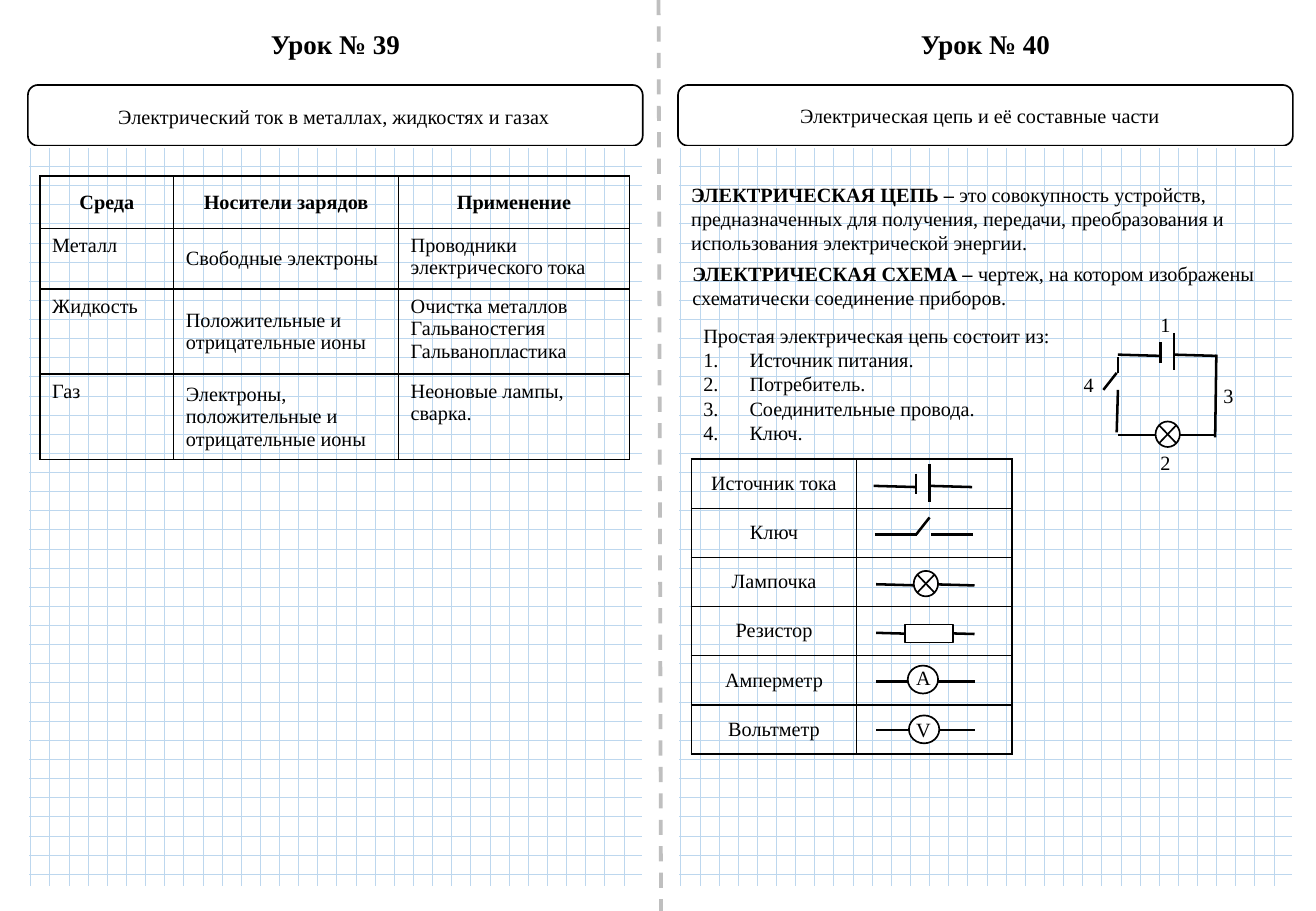
from pptx import Presentation
from pptx import util as u
from pptx.dml.color import RGBColor
from pptx.enum import dml, shapes, text
from pptx.oxml import parse_xml
from pptx.oxml.ns import nsdecls, qn

# Content
FONT, INK, PAPER, GRID, CUT = "Times New Roman", "000000", "FFFFFF", "BDD7EE", "BFBFBF"
PAGES = [(0.23, "Урок № 39"), (5.58, "Урок № 40")]
TOPICS = [
    ((0.33, 0.81, 4.84, 0.3), "Электрический ток в металлах, жидкостях и газах"),
    ((5.5, 0.8, 5.13, 0.3), "Электрическая цепь и её составные части"),
]
MEDIA = [
    ["Среда", "Носители зарядов", "Применение"],
    ["Металл", "Свободные электроны", "Проводники электрического тока"],
    ["Жидкость", "Положительные и отрицательные ионы",
     "Очистка металлов\nГальваностегия\nГальванопластика"],
    ["Газ", "Электроны, положительные и отрицательные ионы", "Неоновые лампы, сварка."],
]
TERMS = [
    ((5.59, 1.45, 5.25, 0.71), "ЭЛЕКТРИЧЕСКАЯ ЦЕПЬ – ",
     "это совокупность устройств, предназначенных для получения, передачи, "
     "преобразования и использования электрической энергии."),
    ((5.6, 2.1, 5.25, 0.5), "ЭЛЕКТРИЧЕСКАЯ СХЕМА – ",
     "чертеж, на котором изображены схематически соединение приборов."),
]
INTRO = "Простая электрическая цепь состоит из:"
PARTS = ["Источник питания.", "Потребитель.", "Соединительные провода.", "Ключ."]
SIGNS = ["Источник тока", "Ключ", "Лампочка", "Резистор", "Амперметр", "Вольтметр"]

# Each pair of wire stubs: left end, height, drop along the stub
STUBS = [(7.19, 4, 0.01), (7.2, 4.4, 0), (7.21, 4.81, 0.01), (7.21, 5.21, 0.01),
         (7.21, 5.61, 0), (7.21, 6.01, 0), (9.2, 2.92, 0.01), (9.2, 3.58, 0)]
CELLS = [(7.19, 4), (9.2, 2.92)]
LAMPS = [(7.21, 4.81), (9.2, 3.58)]
KEYS = [(7.54, 4.4, 7.65, 4.26), (9.08, 3.21, 9.19, 3.07)]
SIDES = [(9.19, 3.56, 9.2, 3.21), (10, 3.6, 10.01, 2.92), (9.2, 3.07, 9.2, 2.94)]
METERS = [(7.47, 5.48), (7.48, 5.89)]
MARKS = [("А", 7.44, 5.43), ("V", 7.44, 5.86), ("1", 9.45, 2.52),
         ("2", 9.45, 3.66), ("3", 9.97, 3.11), ("4", 8.82, 3.02)]

deck = Presentation()
deck.slide_width, deck.slide_height = u.Inches(10.83), u.Inches(7.5)
slide = deck.slides.add_slide(deck.slide_layouts[6])
art = slide.shapes
SHAPE = shapes.MSO_SHAPE
MID = text.PP_ALIGN.CENTER


def paint(color, code):
    color.rgb = RGBColor.from_string(code)


def inches(*nums):
    return [u.Inches(n) for n in nums]


def write(para, words, size=12, bold=False, align=None):
    run = para.add_run()
    run.text = words
    run.font.name, run.font.size, run.font.bold = FONT, u.Pt(size), bold
    paint(run.font.color, INK)
    if align is not None:
        para.alignment = align


def box(at):
    frame = art.add_textbox(*inches(*at)).text_frame
    frame.word_wrap = True
    frame.auto_size = text.MSO_AUTO_SIZE.SHAPE_TO_FIT_TEXT
    return frame


def shape(kind, at, edge=INK):
    item = art.add_shape(kind, *inches(*at))
    item.shadow.inherit = False
    item.fill.solid()
    paint(item.fill.fore_color, PAPER)
    paint(item.line.color, edge)
    item.line.width = u.Pt(1)
    return item


def wire(x1, y1, x2, y2, code=INK, width=1.5):
    item = art.add_connector(shapes.MSO_CONNECTOR.STRAIGHT, *inches(x1, y1, x2, y2))
    paint(item.line.color, code)
    item.line.width = u.Pt(width)
    item._element.spPr.append(parse_xml(f"<a:effectLst {nsdecls('a')}/>"))
    return item


def table(left, top, cols, rows):
    grid = art.add_table(len(rows), len(cols),
                         *inches(left, top, sum(cols), sum(rows))).table
    grid.first_row = grid.horz_banding = False
    for col, size in zip(grid.columns, cols):
        col.width = u.Inches(size)
    for row, size in zip(grid.rows, rows):
        row.height = u.Inches(size)
    for cell in grid.iter_cells():
        cell.fill.background()
        props = cell._tc.get_or_add_tcPr()
        for spot, side in enumerate("LRTB"):
            props.insert(spot, parse_xml(
                f'<a:ln{side} {nsdecls("a")} w="12700"><a:solidFill>'
                f'<a:srgbClr val="{INK}"/></a:solidFill></a:ln{side}>'))
    return grid


def put(cell, words, bold=False, align=None, middle=True):
    if middle:
        cell.vertical_anchor = text.MSO_ANCHOR.MIDDLE
    for n, line in enumerate(words.split("\n")):
        para = cell.text_frame.add_paragraph() if n else cell.text_frame.paragraphs[0]
        write(para, line, bold=bold, align=align)


# Cut line, titles, topic frames and squared paper
cut = wire(5.42, 0, 5.44, 7.5, CUT, 2.25)
cut.line.dash_style = dml.MSO_LINE.DASH
for (left, title), (at, topic) in zip(PAGES, TOPICS):
    write(box((left, 0.18, 5.06, 0.37)).paragraphs[0], title, 16, True, MID)
    shape(SHAPE.FLOWCHART_ALTERNATE_PROCESS, (left, 0.7, 5.06, 0.5))
    write(box(at).paragraphs[0], topic, align=MID)
    fill = shape(SHAPE.FLOWCHART_PROCESS, (left, 1.21, 5.06, 6.09), PAPER).fill
    fill.patterned()
    fill.pattern = dml.MSO_PATTERN.DOTTED_GRID
    paint(fill.fore_color, GRID)
    paint(fill.back_color, PAPER)

# Table of media
grid = table(0.33, 1.45, [1.1, 1.85, 1.9], [0.43, 0.5, 0.7, 0.7])
for r, row in enumerate(MEDIA):
    for c, words in enumerate(row):
        head = r == 0
        put(grid.cell(r, c), words, head, MID if head else None, head or c == 1)

# Terms and numbered parts
for at, term, sense in TERMS:
    para = box(at).paragraphs[0]
    write(para, term, bold=True)
    write(para, sense)
frame = box((5.69, 2.61, 4.03, 1.11))
write(frame.paragraphs[0], INTRO)
for part in PARTS:
    para = frame.add_paragraph()
    write(para, part)
    props = para._p.get_or_add_pPr()
    props.set("marL", str(u.Inches(0.38)))
    props.set("indent", str(-u.Inches(0.38)))
    props.append(props.makeelement(qn("a:buAutoNum"), {"type": "arabicPeriod"}))

# Table of signs
grid = table(5.69, 3.78, [1.36, 1.28], [0.405] * len(SIGNS))
for r, name in enumerate(SIGNS):
    put(grid.cell(r, 0), name, align=MID)

# Wires, battery plates and keys
for x, y, drop in STUBS:
    for left in (x, x + 0.46):
        wire(left, y, left + 0.35, y + drop)
for x, y in CELLS:
    wire(x + 0.35, y - 0.1, x + 0.35, y + 0.07)
    wire(x + 0.46, y - 0.18, x + 0.46, y + 0.13)
for ends in KEYS + SIDES:
    wire(*ends)

# Lamps, resistor, meters and their marks
for x, y in LAMPS:
    shape(SHAPE.FLOWCHART_SUMMING_JUNCTION, (x + 0.31, y - 0.11, 0.2, 0.21))
shape(SHAPE.FLOWCHART_PROCESS, (7.45, 5.14, 0.39, 0.15))
for x, y in METERS:
    shape(SHAPE.OVAL, (x, y, 0.25, 0.23))
for mark, x, y in MARKS:
    write(box((x, y, 0.41, 0.3)).paragraphs[0], mark)

deck.save("out.pptx")
